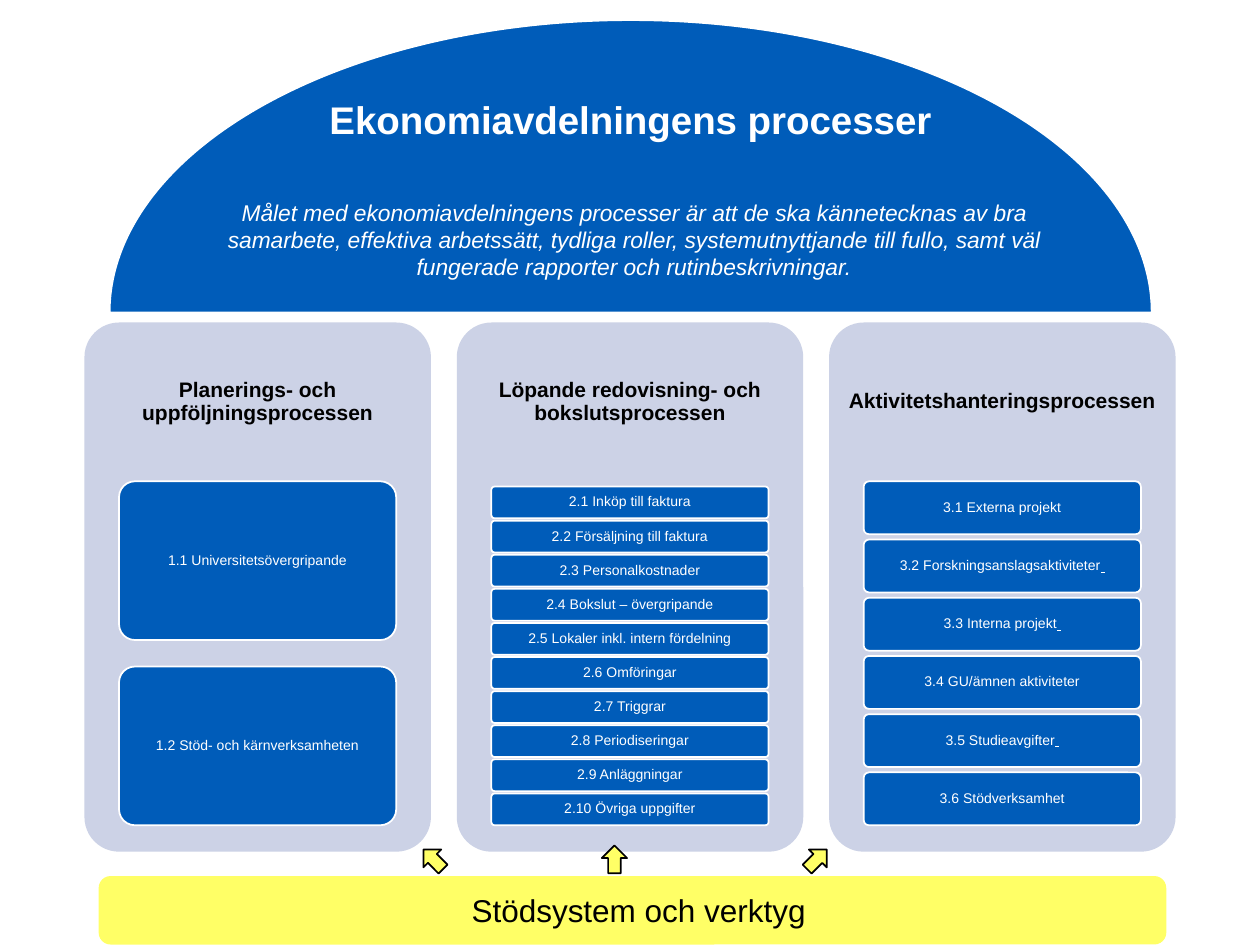
from dataclasses import dataclass

from pptx import Presentation
from pptx.dml.color import RGBColor
from pptx.enum.shapes import MSO_SHAPE
from pptx.enum.text import MSO_ANCHOR, MSO_AUTO_SIZE, PP_ALIGN
from pptx.util import Inches, Pt

ROUNDED, PIE, ARROW = MSO_SHAPE.ROUNDED_RECTANGLE, MSO_SHAPE.PIE, MSO_SHAPE.LEFT_ARROW
MIDDLE, CENTER, NO_FIT = MSO_ANCHOR.MIDDLE, PP_ALIGN.CENTER, MSO_AUTO_SIZE.NONE


@dataclass(frozen=True)
class Theme:
    font: str = "Arial"
    blue: str = "005CB9"
    lavender: str = "CCD2E6"
    yellow: str = "FFFF66"
    white: str = "FFFFFF"
    black: str = "000000"
    title_size: int = 22
    support_size: int = 18
    goal_size: int = 13
    heading_size: int = 12
    step_size: int = 8


THEME = Theme()

# Heading, process steps, first step's top and step height as shares of the panel.
# A step ending in a space shows that space underlined.
PROCESSES = [
    ("Planerings- och uppföljningsprocessen",
     ["1.1 Universitetsövergripande", "1.2 Stöd- och kärnverksamheten"],
     0.3, 0.3),
    ("Löpande redovisning- och bokslutsprocessen",
     ["2.1 Inköp till faktura", "2.2 Försäljning till faktura",
      "2.3 Personalkostnader", "2.4 Bokslut – övergripande",
      "2.5 Lokaler inkl. intern fördelning", "2.6 Omföringar", "2.7 Triggrar",
      "2.8 Periodiseringar", "2.9 Anläggningar", "2.10 Övriga uppgifter"],
     0.31, 0.06),
    ("Aktivitetshanteringsprocessen",
     ["3.1 Externa projekt", "3.2 Forskningsanslagsaktiviteter ",
      "3.3 Interna projekt ", "3.4 GU/ämnen aktiviteter",
      "3.5 Studieavgifter ", "3.6 Stödverksamhet"],
     0.3, 0.1),
]


def add_block(slide, kind, box, fill, line=None, rotation=0, adjustments=()):
    block = slide.shapes.add_shape(kind, *map(Inches, box))
    block.shadow.inherit = False
    block.rotation = rotation
    for index, value in enumerate(adjustments):
        block.adjustments[index] = value
    block.fill.solid()
    block.fill.fore_color.rgb = RGBColor.from_string(fill)
    if line:
        block.line.color.rgb = RGBColor.from_string(line)
        block.line.width = Pt(1)
    else:
        block.line.fill.background()
    return block


def write(holder, text, size, color, bold=False, italic=False, inset=0.05, spacing=1.0):
    frame = holder.text_frame
    frame.word_wrap = True
    frame.auto_size = NO_FIT
    frame.vertical_anchor = MIDDLE
    frame.margin_left = frame.margin_right = Inches(inset)
    frame.margin_top = frame.margin_bottom = Inches(min(inset, 0.05))
    paragraph = frame.paragraphs[0]
    paragraph.alignment = CENTER
    paragraph.line_spacing = spacing
    paragraph.font.name = THEME.font
    paragraph.font.size = Pt(size)
    paragraph.font.bold = bold
    paragraph.font.italic = italic
    paragraph.font.color.rgb = RGBColor.from_string(color)
    paragraph.add_run().text = text.rstrip()
    if text.endswith(" "):
        underlined = paragraph.add_run()
        underlined.text = " "
        underlined.font.underline = True


def add_dome(slide, box):
    """Half ellipse filling the box, with the title and the goal on it."""
    left, top, width, height = box
    # The pie is a left half, turned a quarter so that it becomes the upper half
    full = 2 * height
    dome = add_block(slide, PIE, (left + (width - full) / 2, top + height - width / 2, full, width),
                     THEME.blue, THEME.white, 90, (54, 162))

    title = slide.shapes.title
    title.left, title.top = Inches(left + 0.2 * width), Inches(top + 0.24 * height)
    title.width, title.height = Inches(0.6 * width), Inches(0.2 * height)
    write(title, "Ekonomiavdelningens processer", THEME.title_size, THEME.white, bold=True)
    dome.element.addnext(title.element)

    goal = slide.shapes.add_textbox(Inches(left + 0.063 * width), Inches(top + 0.585 * height),
                                    Inches(0.88 * width), Inches(0.33 * height))
    write(goal, "Målet med ekonomiavdelningens processer är att de ska kännetecknas av bra "
                "samarbete, effektiva arbetssätt, tydliga roller, systemutnyttjande till fullo, "
                "samt väl fungerade rapporter och rutinbeskrivningar.",
          THEME.goal_size, THEME.white, italic=True, inset=0.1)


def add_process(slide, box, heading, steps, first_top, step_height):
    """Panel with a heading and evenly spread steps that end at 95 % of its height."""
    left, top, width, height = box
    add_block(slide, ROUNDED, box, THEME.lavender, adjustments=(0.1,))
    header = slide.shapes.add_textbox(*map(Inches, (left, top, width, 0.3 * height)))
    write(header, heading, THEME.heading_size, THEME.black, bold=True, spacing=0.9)

    pitch = (0.95 - first_top - step_height) / (len(steps) - 1)
    for row, step in enumerate(steps):
        step_box = (left + 0.1 * width, top + (first_top + row * pitch) * height,
                    0.8 * width, step_height * height)
        tile = add_block(slide, ROUNDED, step_box, THEME.blue, THEME.white, adjustments=(0.1,))
        write(tile, step, THEME.step_size, THEME.white, inset=0.02, spacing=0.9)


def add_processes(slide, box):
    left, top, width, height = box
    panel_width = 2.75
    pitch = (width - panel_width) / (len(PROCESSES) - 1)
    for column, process in enumerate(PROCESSES):
        add_process(slide, (left + column * pitch, top, panel_width, height), *process)


def add_support(slide, box):
    """Support bar with arrows pointing up at the processes."""
    left, top, width, height = box
    bar = add_block(slide, ROUNDED, box, THEME.yellow, THEME.yellow)
    write(bar, "Stödsystem och verktyg", THEME.support_size, THEME.black)
    bar.text_frame.margin_left = Inches(0.15)
    for share, rotation in ((0.3, 45), (0.47, 90), (0.66, 135)):
        add_block(slide, ARROW, (left + share * width, top - 0.24, 0.22, 0.2),
                  THEME.yellow, THEME.black, rotation)


def main():
    deck = Presentation()
    deck.slide_width, deck.slide_height = Inches(10), Inches(7.5)
    slide = deck.slides.add_slide(deck.slide_layouts[5])
    add_processes(slide, (0.67, 2.56, 8.66, 4.2))
    add_dome(slide, (0.87, 0.16, 8.27, 2.32))
    add_support(slide, (0.79, 6.96, 8.46, 0.53))
    deck.save("out.pptx")


if __name__ == "__main__":
    main()
